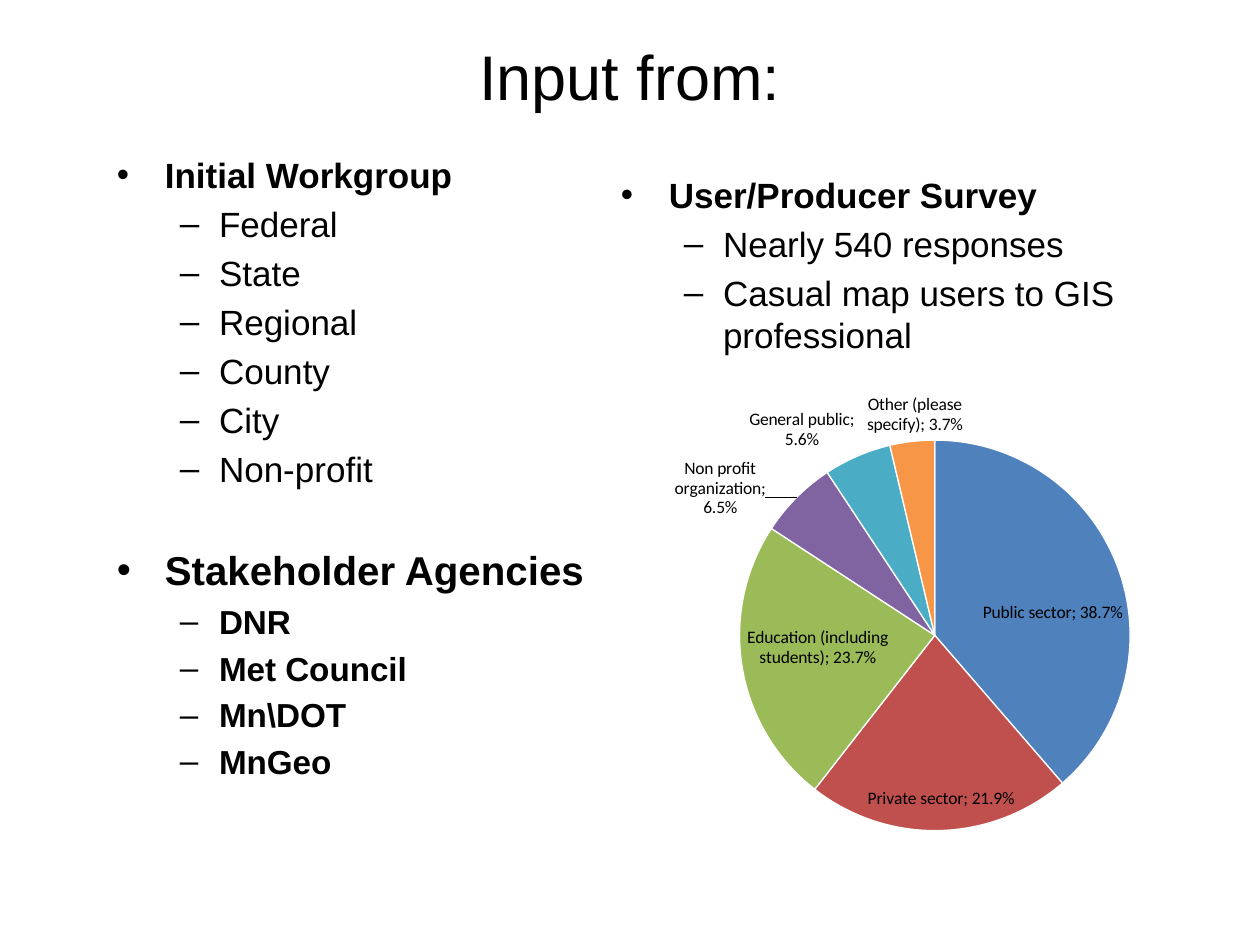
from dataclasses import dataclass

from lxml.etree import SubElement
from pptx import Presentation
from pptx.chart.data import CategoryChartData
from pptx.dml.color import RGBColor
from pptx.enum.chart import XL_CHART_TYPE as ChartType, XL_LABEL_POSITION as LabelPosition
from pptx.enum.text import MSO_ANCHOR as Anchor, PP_ALIGN as Align
from pptx.oxml import parse_xml
from pptx.oxml.ns import nsdecls, qn
from pptx.slide import Slide
from pptx.text.text import TextFrame
from pptx.util import Inches, Pt

BLACK = "000000"
WHITE = "FFFFFF"


@dataclass(frozen=True)
class Bullet:
    text: str
    size: float = 20
    bold: bool = False
    level: int = 1
    gap: float = 4


@dataclass(frozen=True)
class Sector:
    name: str
    share: float
    color: str


@dataclass(frozen=True)
class Indent:
    mark: str
    left: float
    hang: float


INDENTS = (Indent("•", 0.38, 0.38), Indent("–", 0.81, 0.31))

WORKGROUP = ("Federal", "State", "Regional", "County", "City", "Non-profit")
AGENCIES = ("DNR", "Met Council", "Mn\\DOT", "MnGeo")

SOURCES = [
    Bullet("Initial Workgroup", bold=True, level=0, gap=0),
    *[Bullet(name) for name in WORKGROUP],
    Bullet("Stakeholder Agencies", 23, True, 0, 32),
    *[Bullet(name, 19, True) for name in AGENCIES],
]
SURVEY = [
    Bullet("User/Producer Survey", bold=True, level=0, gap=0),
    Bullet("Nearly 540 responses"),
    Bullet("Casual map users to GIS professional"),
]
SECTORS = [
    Sector("Public sector", 0.387, "4F81BD"),
    Sector("Private sector", 0.219, "C0504D"),
    Sector("Education (including students)", 0.237, "9BBB59"),
    Sector("Non profit organization", 0.065, "8064A2"),
    Sector("General public", 0.056, "4BACC6"),
    Sector("Other (please specify)", 0.037, "F79646"),
]


def color(value: str) -> RGBColor:
    return RGBColor.from_string(value)


def add_frame(page: Slide, left: float, top: float, width: float, height: float) -> TextFrame:
    box = page.shapes.add_textbox(Inches(left), Inches(top), Inches(width), Inches(height))
    box.text_frame.word_wrap = True
    return box.text_frame


def add_span(para, text: str, size: float, bold: bool = False) -> None:
    span = para.add_run()
    span.text = text
    span.font.name = "Arial"
    span.font.size = Pt(size)
    span.font.bold = bold
    span.font.color.rgb = color(BLACK)


def add_title(page: Slide, text: str) -> None:
    frame = add_frame(page, 0.5, 0.25, 9, 0.7)
    frame.vertical_anchor = Anchor.MIDDLE
    para = frame.paragraphs[0]
    para.alignment = Align.CENTER
    add_span(para, text, 36)


def add_bullets(frame: TextFrame, bullets: list[Bullet]) -> None:
    for index, bullet in enumerate(bullets):
        para = frame.add_paragraph() if index else frame.paragraphs[0]
        indent = INDENTS[bullet.level]
        para.level = bullet.level
        para.line_spacing = Pt(bullet.size * 1.2)
        para.space_before = Pt(bullet.gap)
        properties = para._p.get_or_add_pPr()
        properties.set("marL", str(Inches(indent.left)))
        properties.set("indent", str(-Inches(indent.hang)))
        SubElement(properties, qn("a:buFont")).set("typeface", "Arial")
        SubElement(properties, qn("a:buChar")).set("char", indent.mark)
        add_span(para, bullet.text, bullet.size, bullet.bold)


def add_survey_pie(page: Slide, sectors: list[Sector]) -> None:
    data = CategoryChartData(number_format="0.0%")
    data.categories = [sector.name for sector in sectors]
    data.add_series("Series 1", [sector.share for sector in sectors])
    chart = page.shapes.add_chart(
        ChartType.PIE, Inches(4.42), Inches(3), Inches(5), Inches(3.75), data
    ).chart
    chart.has_title = False
    chart.has_legend = False
    chart.font.name = "Calibri"
    chart.font.size = Pt(10)
    chart.font.color.rgb = color(BLACK)

    plot = chart.plots[0]
    plot.vary_by_categories = True
    for index, sector in enumerate(sectors):
        slice_format = plot.series[0].points[index].format
        slice_format.fill.solid()
        slice_format.fill.fore_color.rgb = color(sector.color)
        slice_format.line.color.rgb = color(WHITE)
        slice_format.line.width = Pt(0.75)

    plot.has_data_labels = True
    labels = plot.data_labels
    labels.show_value = True
    labels.show_category_name = True
    labels.show_percentage = False
    labels.number_format = "0.0%"
    labels.number_format_is_linked = False
    labels.position = LabelPosition.BEST_FIT

    area = chart._chartSpace.chart.plotArea
    for layout in area.findall(qn("c:layout")):
        area.remove(layout)
    area.insert(0, parse_xml(
        f'<c:layout {nsdecls("c")}><c:manualLayout><c:layoutTarget val="inner"/>'
        '<c:xMode val="edge"/><c:yMode val="edge"/><c:x val="0.29"/><c:y val="0.13"/>'
        '<c:w val="0.62"/><c:h val="0.83"/></c:manualLayout></c:layout>'
    ))


def main() -> None:
    deck = Presentation()
    deck.slide_width, deck.slide_height = Inches(10), Inches(7.5)
    page = deck.slides.add_slide(deck.slide_layouts[6])
    add_title(page, "Input from:")
    add_bullets(add_frame(page, 4.83, 1.33, 4.25, 2.51), SURVEY)
    add_bullets(add_frame(page, 0.83, 1.17, 3.92, 5.33), SOURCES)
    add_survey_pie(page, SECTORS)
    deck.save("out.pptx")


if __name__ == "__main__":
    main()
